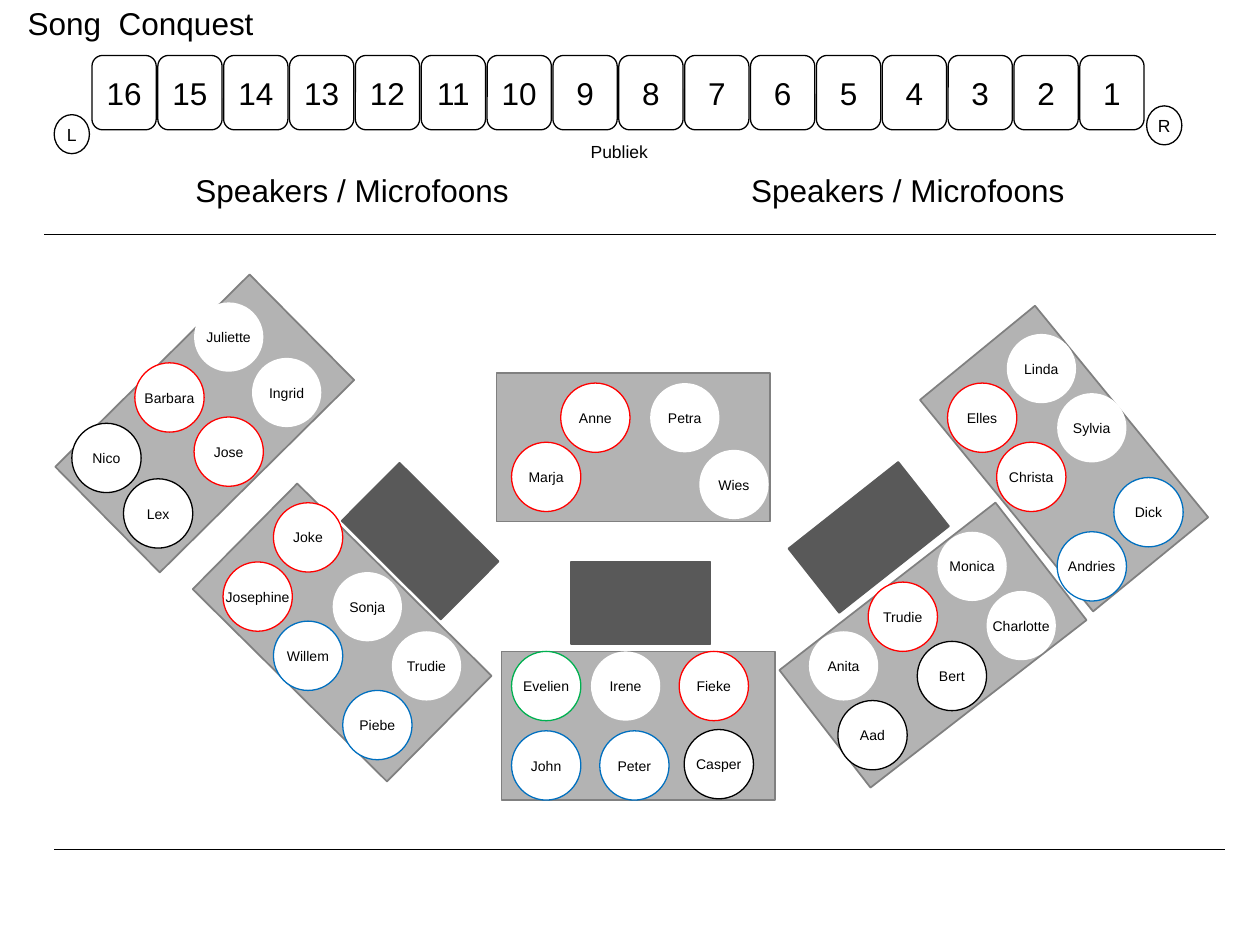
import pptx
import pptx.util
from dataclasses import dataclass
from lxml import etree
from pptx.dml.color import RGBColor
from pptx.enum.shapes import MSO_CONNECTOR, MSO_SHAPE
from pptx.enum.text import MSO_ANCHOR, MSO_AUTO_SIZE, PP_ALIGN
from pptx.oxml.ns import qn

Inches = pptx.util.Inches


@dataclass(frozen=True)
class Theme:
    font: str = "Arial"
    ink: str = "000000"
    paper: str = "FFFFFF"
    riser: str = "B3B3B3"
    riser_edge: str = "808080"
    panel: str = "595959"
    red: str = "FF0000"
    blue: str = "0070C0"
    green: str = "00B050"
    large: float = 18
    medium: float = 10
    small: float = 8
    thin: float = 0.75
    edge: float = 1


THEME = Theme()
RISER_SIZE = (2.17, 1.18)
PANEL_SIZE = (1.11, 0.65)
SEAT = 0.55

# Left, top, rotation
PANELS = [(2.78, 3.97, 44.9), (6.34, 3.94, 321.7), (4.53, 4.46, 0)]

# Left, top, rotation, then singers: name, offset from the riser's corner, ring colour
RISERS = [
    (3.94, 2.96, 0, [
        ("Anne", 0.51, 0.08, THEME.red), ("Petra", 1.22, 0.08, None),
        ("Marja", 0.12, 0.55, THEME.red), ("Wies", 1.61, 0.61, None)]),
    (3.98, 5.17, 0, [
        ("Evelien", 0.08, 0, THEME.green), ("Irene", 0.71, 0, None),
        ("Fieke", 1.41, 0, THEME.red), ("John", 0.08, 0.63, THEME.blue),
        ("Peter", 0.78, 0.63, THEME.blue), ("Casper", 1.45, 0.62, THEME.ink)]),
    (6.32, 4.53, 322.2, [
        ("Monica", 1.12, -0.31, None), ("Trudie", 0.57, 0.09, THEME.red),
        ("Charlotte", 1.51, 0.16, None), ("Anita", 0.1, 0.48, None),
        ("Bert", 0.96, 0.56, THEME.ink), ("Aad", 0.33, 1.03, THEME.ink)]),
    (1.63, 4.43, 44.7, [
        ("Joke", 0.54, -0.44, THEME.red), ("Josephine", 0.14, 0.03, THEME.red),
        ("Sonja", 1.01, 0.11, None), ("Willem", 0.54, 0.5, THEME.blue),
        ("Trudie", 1.48, 0.58, None), ("Piebe", 1.09, 1.05, THEME.blue)]),
    (7.36, 3.05, 50.7, [
        ("Linda", 0.63, -0.4, None), ("Elles", 0.16, -0.01, THEME.red),
        ("Sylvia", 1.03, 0.07, None), ("Christa", 0.55, 0.46, THEME.red),
        ("Dick", 1.48, 0.74, THEME.blue), ("Andries", 1.03, 1.17, THEME.blue)]),
    (0.54, 2.77, 315.3, [
        ("Juliette", 1, -0.37, None), ("Barbara", 0.53, 0.11, THEME.red),
        ("Ingrid", 1.46, 0.07, None), ("Jose", 1, 0.54, THEME.red),
        ("Nico", 0.03, 0.59, THEME.ink), ("Lex", 0.44, 1.03, THEME.ink)]),
]


def write(frame, text, size, align=PP_ALIGN.CENTER, anchor=MSO_ANCHOR.MIDDLE, wrap=False):
    frame.text = text
    frame.word_wrap = wrap
    frame.auto_size = MSO_AUTO_SIZE.NONE
    frame.vertical_anchor = anchor
    line = frame.paragraphs[0]
    line.alignment = align
    font = line.runs[0].font
    font.name = THEME.font
    font.size = pptx.util.Pt(size)
    font.color.rgb = RGBColor.from_string(THEME.ink)


def add_block(slide, kind, box, fill=None, line=None, width=THEME.thin):
    block = slide.shapes.add_shape(kind, *map(Inches, box))
    block.shadow.inherit = False
    if fill:
        block.fill.solid()
        block.fill.fore_color.rgb = RGBColor.from_string(fill)
    else:
        block.fill.background()
    if line:
        block.line.color.rgb = RGBColor.from_string(line)
        block.line.width = pptx.util.Pt(width)
    else:
        block.line.fill.background()
    return block


def add_label(slide, box, text, size):
    label = slide.shapes.add_textbox(*map(Inches, box))
    write(label.text_frame, text, size, anchor=MSO_ANCHOR.TOP, wrap=True)


def add_rule(slide, left, right, y):
    rule = slide.shapes.add_connector(
        MSO_CONNECTOR.STRAIGHT, Inches(left), Inches(y), Inches(right), Inches(y))
    rule.line.color.rgb = RGBColor.from_string(THEME.ink)
    rule.line.width = pptx.util.Pt(THEME.thin)
    etree.SubElement(rule._element.spPr, qn("a:effectLst"))


def place_title(slide, box, text):
    title = slide.shapes.title
    title.left, title.top, title.width, title.height = map(Inches, box)
    write(title.text_frame, text, THEME.large, PP_ALIGN.LEFT, MSO_ANCHOR.TOP, True)


def place_positions(slide, left, top, width, height, count=16):
    """Numbered places in a row, highest number on the left."""
    card = 0.51
    pitch = (width - card) / (count - 1)
    for index in range(count):
        place = add_block(slide, MSO_SHAPE.ROUNDED_RECTANGLE,
                          (left + index * pitch, top, card, height), line=THEME.ink)
        write(place.text_frame, str(count - index), THEME.large)


def place_speakers(slide):
    for side, left, top in [("L", 0.43, 0.91), ("R", 9.1, 0.84)]:
        speaker = add_block(slide, MSO_SHAPE.OVAL, (left, top, 0.28, 0.31),
                            THEME.paper, THEME.ink)
        write(speaker.text_frame, side, THEME.medium)
    for left in (1.22, 5.63):
        add_label(slide, (left, 1.31, 3.15, 0.4), "Speakers / Microfoons", THEME.large)


def place_panel(slide, left, top, rotation):
    panel = add_block(slide, MSO_SHAPE.RECTANGLE, (left, top, *PANEL_SIZE),
                      THEME.panel, THEME.panel, THEME.edge)
    panel.rotation = rotation


def place_riser(slide, left, top, rotation, singers):
    riser = add_block(slide, MSO_SHAPE.RECTANGLE, (left, top, *RISER_SIZE),
                      THEME.riser, THEME.riser_edge, THEME.edge)
    riser.rotation = rotation
    for name, across, down, ring in singers:
        singer = add_block(slide, MSO_SHAPE.OVAL, (left + across, top + down, SEAT, SEAT),
                           THEME.paper, ring)
        write(singer.text_frame, name, THEME.small)


def main():
    deck = pptx.Presentation()
    deck.slide_width, deck.slide_height = Inches(10), Inches(7.5)
    slide = deck.slides.add_slide(deck.slide_layouts[5])
    place_title(slide, (0.12, -0.02, 3.7, 0.4), "Song  Conquest")
    place_positions(slide, 0.73, 0.44, 8.35, 0.59)
    place_speakers(slide)
    add_label(slide, (4.13, 1.07, 1.57, 0.27), "Publiek", THEME.medium)
    add_rule(slide, 0.35, 9.65, 1.86)
    add_rule(slide, 0.43, 9.72, 6.74)
    for panel in PANELS:
        place_panel(slide, *panel)
    for riser in RISERS:
        place_riser(slide, *riser)
    deck.save("out.pptx")


if __name__ == "__main__":
    main()
